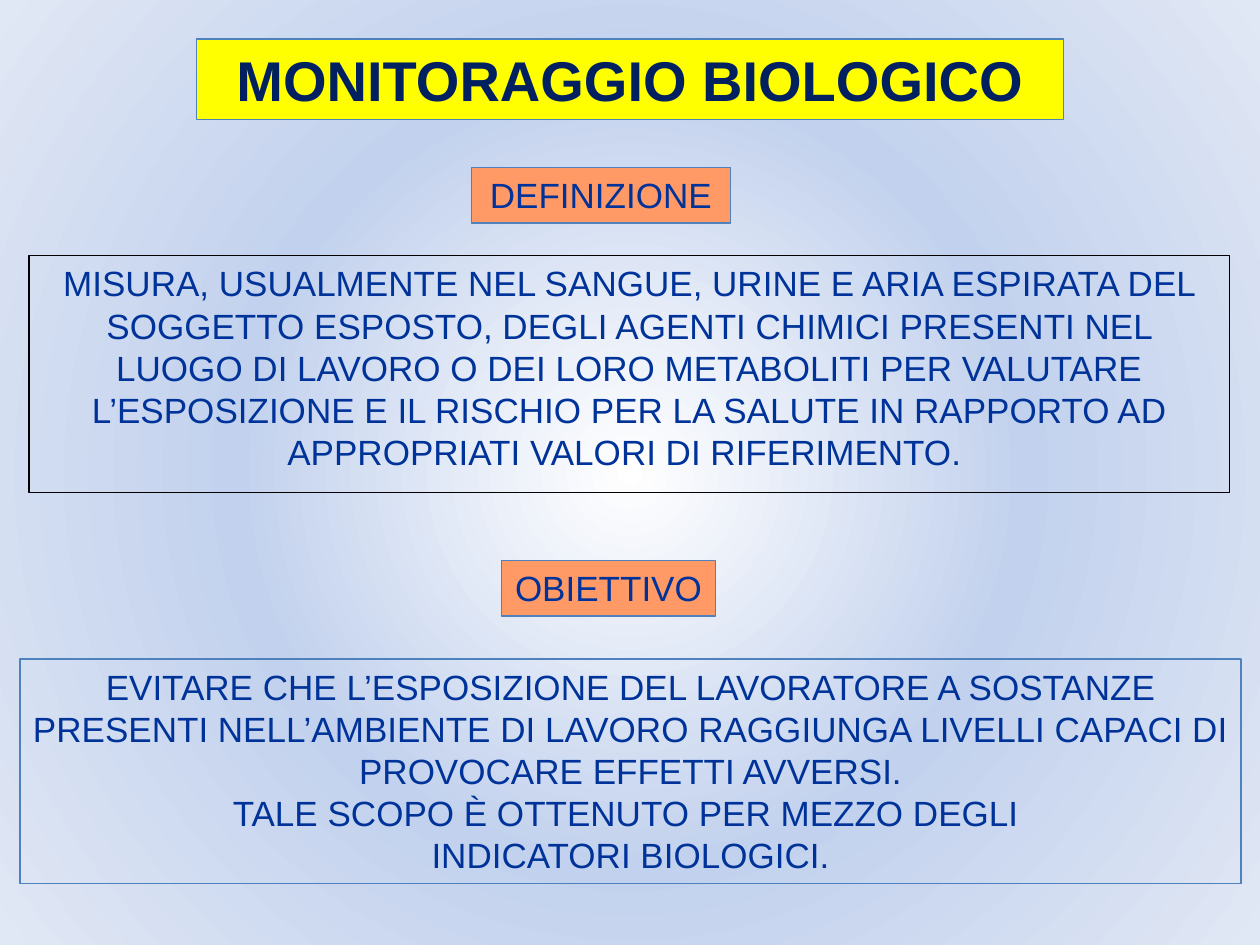
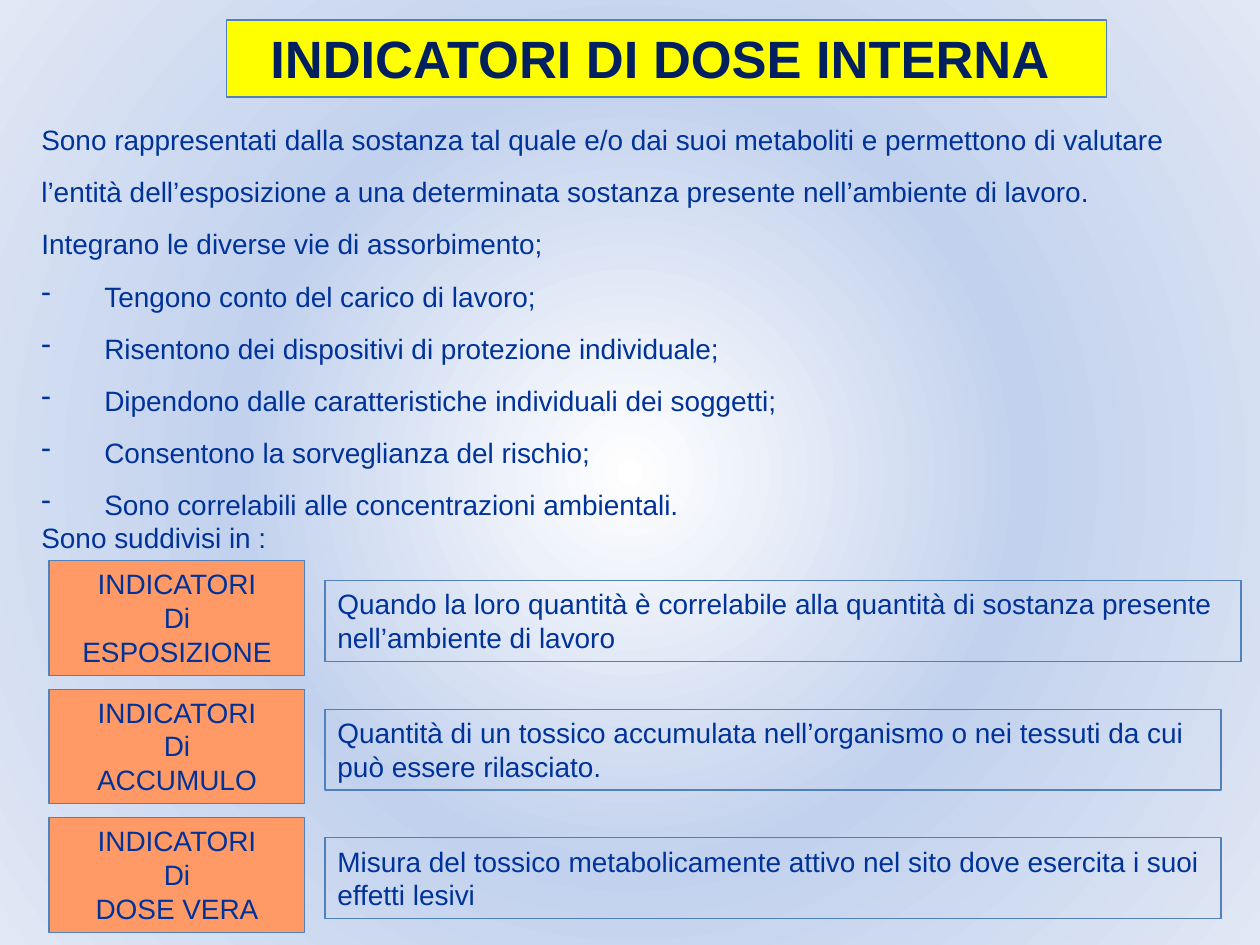
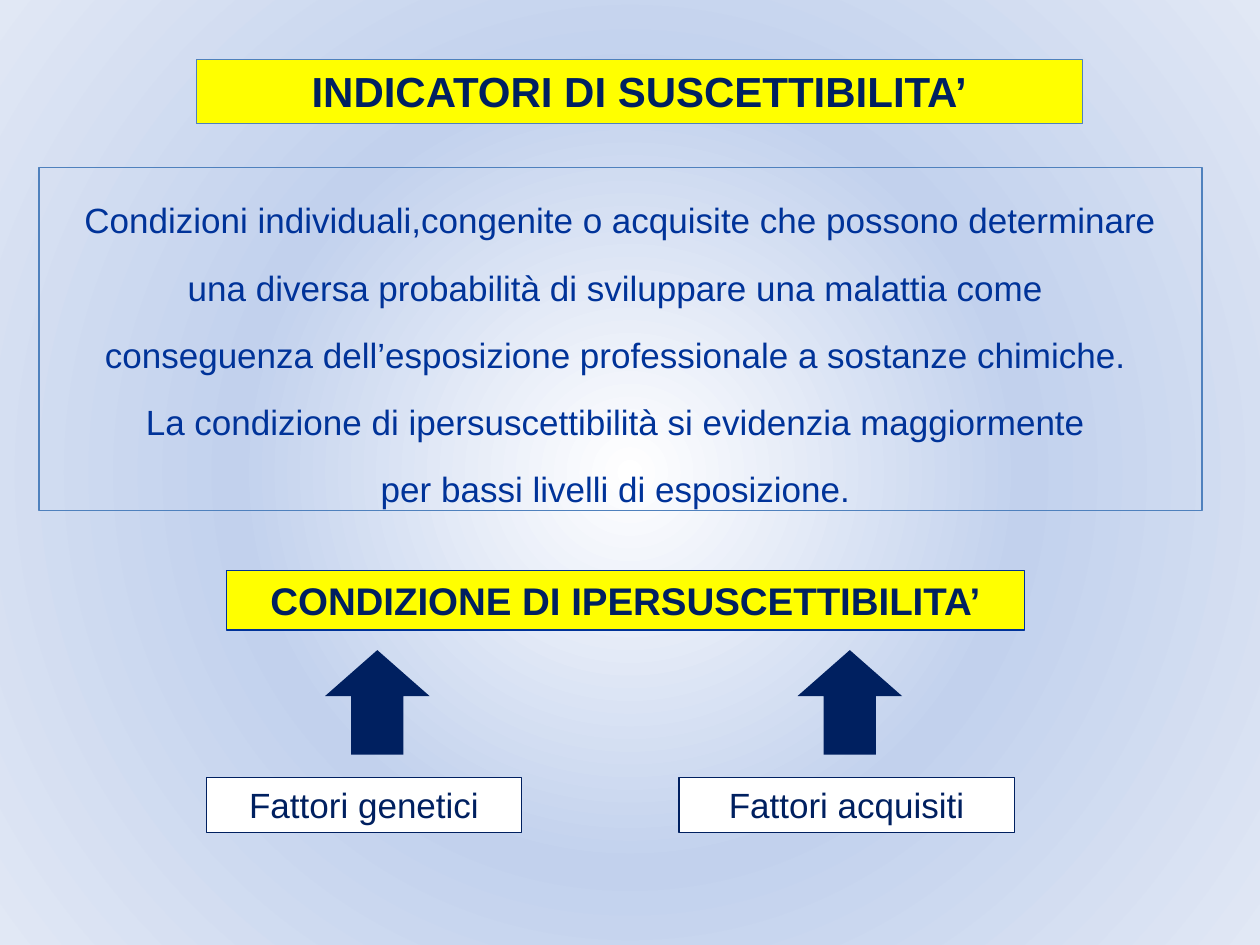
from lxml import etree
from pptx import Presentation
from pptx.dml.color import RGBColor
from pptx.enum.shapes import MSO_SHAPE
from pptx.enum.text import MSO_ANCHOR, PP_ALIGN
from pptx.oxml import parse_xml
from pptx.oxml.ns import nsdecls, qn
from pptx.util import Inches, Pt

RECT, ARROW = MSO_SHAPE.RECTANGLE, MSO_SHAPE.UP_ARROW
LEFT, MID, TOP = PP_ALIGN.LEFT, PP_ALIGN.CENTER, MSO_ANCHOR.TOP
FONT = "Arial"
HUES = {
    "yellow": "FFFF00",
    "orange": "FF9966",
    "white": "FFFFFF",
    "black": "000000",
    "navy": "002060",
    "blue": "003399",
    "edge": "4F81BD",
    "haze": "C2D1ED",
    "pale": "E1E8F5",
}


def hue(name):
    return RGBColor.from_string(HUES[name])


def box(slide, at, lines, size=20, ink="blue", fill=None, edge="edge",
        bold=False, align=MID, lead=None):
    shape = slide.shapes.add_shape(RECT, *[Inches(n) for n in at])
    shape.shadow.inherit = False
    if fill:
        shape.fill.solid()
        shape.fill.fore_color.rgb = hue(fill)
    else:
        shape.fill.background()
    if edge:
        shape.line.color.rgb = hue(edge)
        shape.line.width = Pt(0.75)
    else:
        shape.line.fill.background()
    frame = shape.text_frame
    frame.word_wrap = True
    frame.vertical_anchor = TOP
    for i, line in enumerate(lines):
        para = frame.add_paragraph() if i else frame.paragraphs[0]
        para.alignment = align
        if lead:
            para.line_spacing = lead
        run = para.add_run()
        run.text = line
        run.font.name = FONT
        run.font.size = Pt(size)
        run.font.bold = bold
        run.font.color.rgb = hue(ink)
    return frame


prs = Presentation()
prs.slide_width, prs.slide_height = Inches(10), Inches(7.5)
blank = prs.slide_layouts[6]

master = prs.slide_master
master.background.fill.gradient()
grad = master.element.find(".//" + qn("p:bgPr")).find(qn("a:gradFill"))
for part in list(grad):
    grad.remove(part)
stops = etree.SubElement(grad, qn("a:gsLst"))
for pos, name in ((0, "white"), (50, "haze"), (100, "pale")):
    stop = etree.SubElement(stops, qn("a:gs"), pos=str(pos * 1000))
    tint = etree.SubElement(stop, qn("a:srgbClr"), val=HUES[name])
    if pos == 0:
        etree.SubElement(tint, qn("a:alpha"), val="35000")
grad.append(parse_xml(
    f'<a:path {nsdecls("a")} path="circle">'
    '<a:fillToRect l="50000" t="50000" r="50000" b="50000"/></a:path>'))

title = {"ink": "navy", "fill": "yellow", "bold": True}

slide = prs.slides.add_slide(blank)
box(slide, (1.56, 0.31, 6.88, 0.64), ["MONITORAGGIO BIOLOGICO"], 32, **title)
box(slide, (0.23, 2.03, 9.53, 1.88), [
    "MISURA, USUALMENTE NEL SANGUE, URINE E ARIA ESPIRATA DEL SOGGETTO ESPOSTO, "
    "DEGLI AGENTI CHIMICI PRESENTI NEL LUOGO DI LAVORO O DEI LORO METABOLITI PER "
    "VALUTARE L’ESPOSIZIONE E IL RISCHIO PER LA SALUTE IN RAPPORTO AD APPROPRIATI "
    "VALORI DI RIFERIMENTO. "], edge="black")
box(slide, (0.16, 5.23, 9.69, 1.78), [
    "EVITARE CHE L’ESPOSIZIONE DEL LAVORATORE A SOSTANZE PRESENTI NELL’AMBIENTE "
    "DI LAVORO RAGGIUNGA LIVELLI CAPACI DI PROVOCARE EFFETTI AVVERSI.",
    "TALE SCOPO È OTTENUTO PER MEZZO DEGLI ",
    "INDICATORI BIOLOGICI."])
box(slide, (3.74, 1.33, 2.06, 0.44), ["DEFINIZIONE"], fill="orange")
box(slide, (3.98, 4.45, 1.7, 0.44), ["OBIETTIVO"], fill="orange")

slide = prs.slides.add_slide(blank)
box(slide, (1.8, 0.16, 6.98, 0.61), ["INDICATORI DI DOSE INTERNA "], 30, **title)
body = box(slide, (0.23, 0.78, 9.45, 3.71), [
    "Sono rappresentati dalla sostanza tal quale e/o dai suoi metaboliti e "
    "permettono di valutare l’entità dell’esposizione a una determinata sostanza "
    "presente nell’ambiente di lavoro. Integrano le diverse vie di assorbimento;",
    "Tengono conto del carico di lavoro;",
    "Risentono dei dispositivi di protezione individuale;",
    "Dipendono dalle caratteristiche individuali dei soggetti;",
    "Consentono la sorveglianza del rischio;",
    "Sono correlabili alle concentrazioni ambientali.",
    "Sono suddivisi in :"], 16, edge=None, align=LEFT, lead=1.55)
body.paragraphs[-1].line_spacing = 1.0
for para in body.paragraphs[1:-1]:
    props = para._p.get_or_add_pPr()
    props.set("marL", str(Inches(0.5)))
    props.set("indent", str(-Inches(0.5)))
    etree.SubElement(props, qn("a:buChar"), char="-")

kinds = (
    ("ESPOSIZIONE", 7.27, "Quando la loro quantità è correlabile alla quantità di "
     "sostanza presente nell’ambiente di lavoro"),
    ("ACCUMULO", 7.11, "Quantità di un tossico accumulata nell’organismo o nei "
     "tessuti da cui può essere rilasciato."),
    ("DOSE VERA", 7.11, "Misura del tossico metabolicamente attivo nel sito dove "
     "esercita i suoi effetti lesivi"),
)
for i, (kind, wide, note) in enumerate(kinds):
    top = 4.45 + 1.02 * i
    box(slide, (0.39, top, 2.03, 0.91), ["INDICATORI", "Di", kind], 16, fill="orange")
    box(slide, (2.58, top + 0.16, wide, 0.64), [note], 16, align=LEFT)

slide = prs.slides.add_slide(blank)
box(slide, (1.56, 0.47, 7.03, 0.51), ["INDICATORI DI SUSCETTIBILITA’"], 24, **title)
box(slide, (0.31, 1.33, 9.23, 2.72), [
    "Condizioni individuali,congenite o acquisite che possono determinare una "
    "diversa probabilità di sviluppare una malattia come ",
    "conseguenza dell’esposizione professionale a sostanze chimiche. ",
    "La condizione di ipersuscettibilità si evidenzia maggiormente ",
    "per bassi livelli di esposizione. "], lead=1.6)
box(slide, (1.8, 4.53, 6.33, 0.47), ["CONDIZIONE DI IPERSUSCETTIBILITA’"], 22,
    edge="blue", **title)
for x, left, wide, name in ((2.58, 1.64, 2.5, "Fattori genetici"),
                            (6.33, 5.39, 2.66, "Fattori acquisiti")):
    arrow = slide.shapes.add_shape(
        ARROW, Inches(x), Inches(5.16), Inches(0.83), Inches(0.83))
    arrow.shadow.inherit = False
    arrow.adjustments[1] = 0.44
    arrow.fill.solid()
    arrow.fill.fore_color.rgb = hue("navy")
    arrow.line.fill.background()
    box(slide, (left, 6.17, wide, 0.44), [name], ink="navy", fill="white", edge="navy")

prs.save("out.pptx")
